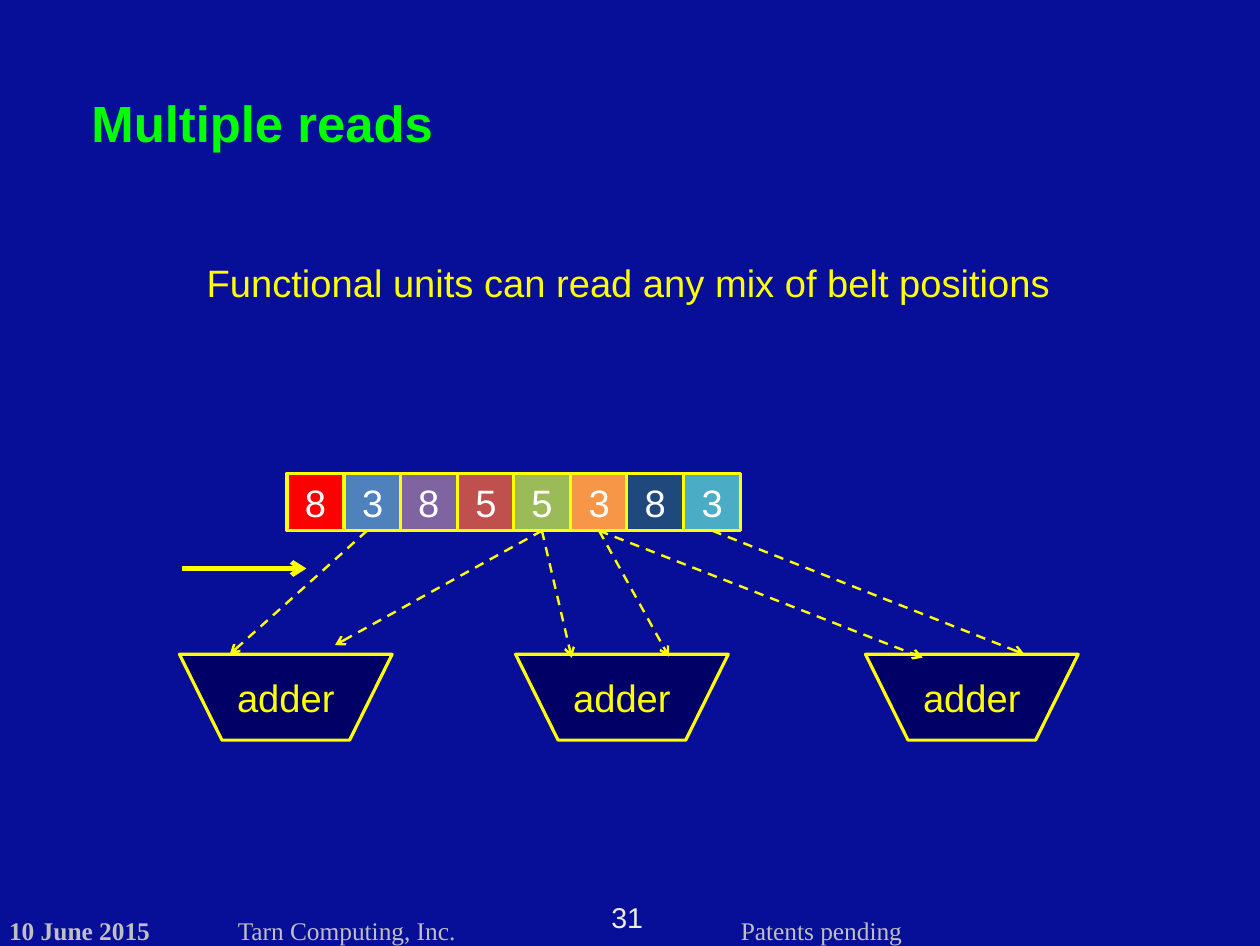
from lxml import etree
from pptx import Presentation
from pptx.dml.color import RGBColor
from pptx.enum.dml import MSO_LINE
from pptx.enum.shapes import MSO_CONNECTOR, MSO_SHAPE
from pptx.enum.text import MSO_ANCHOR, PP_ALIGN
from pptx.oxml.ns import qn
from pptx.util import Pt

PX = 9144
RECT = MSO_SHAPE.RECTANGLE
FUNNEL = MSO_SHAPE.FLOWCHART_MANUAL_OPERATION
LINE = MSO_CONNECTOR.STRAIGHT
DASH = MSO_LINE.DASH
MIDDLE = MSO_ANCHOR.MIDDLE
LEFT, CENTER = PP_ALIGN.LEFT, PP_ALIGN.CENTER
BOTTOM = 2

BLUE = RGBColor(0x07, 0x0E, 0x97)
NAVY = RGBColor(0x00, 0x00, 0x66)
YELLOW = RGBColor(0xFF, 0xFF, 0x00)
GREEN = RGBColor(0x00, 0xFF, 0x00)
WHITE = RGBColor(0xFF, 0xFF, 0xFF)
SILVER = RGBColor(0xC0, 0xC0, 0xC0)
CREAM = RGBColor(0xEE, 0xEC, 0xE1)
RED = RGBColor(0xFF, 0x00, 0x00)
SKY = RGBColor(0x4F, 0x81, 0xBD)
PURPLE = RGBColor(0x80, 0x64, 0xA2)
BRICK = RGBColor(0xC0, 0x50, 0x4D)
OLIVE = RGBColor(0x9B, 0xBB, 0x59)
ORANGE = RGBColor(0xF7, 0x96, 0x46)
DEEP = RGBColor(0x1F, 0x49, 0x7D)
TEAL = RGBColor(0x4B, 0xAC, 0xC6)

SANS, SERIF = "Arial", "Times New Roman"

BELT = [("8", RED), ("3", SKY), ("8", PURPLE), ("5", BRICK),
        ("5", OLIVE), ("3", ORANGE), ("8", DEEP), ("3", TEAL)]
BELT_X, BELT_Y, BELT_SPAN, CELL = 251, 414, 347, 50
ADDERS = [157, 451, 757]
READS = [(4, 293, 564), (4, 500, 575), (5, 585, 574),
         (5, 807, 575), (7, 896, 572)]


def scale(*sizes):
    """Turn px lengths into EMU."""
    return [size * PX for size in sizes]


def style(frame, text, size, color, face=SANS, bold=False, align=LEFT):
    """Fill a text frame with one formatted paragraph."""
    frame.text = text
    para = frame.paragraphs[0]
    para.alignment = align
    font = para.runs[0].font
    font.name, font.size, font.bold = face, Pt(size), bold
    font.color.rgb = color


def add_label(slide, box, text, size, color, **look):
    """Add a line of text in a box without margins."""
    frame = slide.shapes.add_textbox(*scale(*box)).text_frame
    frame.margin_left = frame.margin_right = 0
    frame.margin_top = frame.margin_bottom = 0
    frame.word_wrap = False
    style(frame, text, size, color, **look)


def add_block(slide, kind, box, text, fill, color):
    """Add a filled shape with a yellow outline and centred text."""
    shape = slide.shapes.add_shape(kind, *scale(*box))
    shape.shadow.inherit = False
    shape.fill.solid()
    shape.fill.fore_color.rgb = fill
    shape.line.color.rgb = YELLOW
    shape.line.width = Pt(2)
    shape.text_frame.vertical_anchor = MIDDLE
    style(shape.text_frame, text, 24, color, align=CENTER)
    return shape


def add_arrow(slide, ends, width, dash=None):
    """Add a yellow arrow between two points."""
    arrow = slide.shapes.add_connector(LINE, *scale(*ends))
    arrow.line.color.rgb = YELLOW
    arrow.line.width = Pt(width)
    arrow.line.dash_style = dash
    props = arrow.element.spPr
    head = etree.SubElement(props.find(qn("a:ln")), qn("a:tailEnd"))
    head.set("type", "arrow")
    etree.SubElement(props, qn("a:effectLst"))
    return arrow


def add_belt(slide):
    """Add the belt cells and return them in order."""
    cells = []
    for i, (value, fill) in enumerate(BELT):
        left = BELT_X + round(i * BELT_SPAN / (len(BELT) - 1))
        box = (left, BELT_Y, CELL, CELL)
        cells.append(add_block(slide, RECT, box, value, fill, WHITE))
    return cells


def add_footer(slide):
    """Add the date, firm, page number and patent note."""
    add_label(slide, (8, 800, 160, 26), "10 June 2015", 16, SILVER,
              face=SERIF, bold=True)
    add_label(slide, (533, 787, 31, 29), "31", 18, CREAM, align=CENTER)
    add_label(slide, (208, 800, 220, 26), "Tarn Computing, Inc.", 16, SILVER,
              face=SERIF)
    add_label(slide, (648, 800, 160, 26), "Patents pending", 16, SILVER,
              face=SERIF)


def main():
    """Build the slide and save it."""
    deck = Presentation()
    deck.slide_width, deck.slide_height = scale(1102, 827)
    slide = deck.slides.add_slide(deck.slide_layouts[6])
    slide.background.fill.solid()
    slide.background.fill.fore_color.rgb = BLUE

    add_footer(slide)
    add_label(slide, (80, 80, 320, 52), "Multiple reads", 32, GREEN, bold=True)
    add_label(slide, (167, 227, 765, 40),
              "Functional units can read any mix of belt positions",
              24, YELLOW, align=CENTER)

    cells = add_belt(slide)
    for left in ADDERS:
        add_block(slide, FUNNEL, (left, 572, 186, 75), "adder", NAVY, YELLOW)

    base = BELT_Y + CELL
    add_arrow(slide, (321, base, 201, 572), 1.5, DASH)
    for i, x, y in READS:
        arrow = add_arrow(slide, (BELT_X, base, x, y), 1.5, DASH)
        arrow.begin_connect(cells[i], BOTTOM)
    add_arrow(slide, (159, 497, 268, 497), 3)

    deck.save("out.pptx")


if __name__ == "__main__":
    main()
